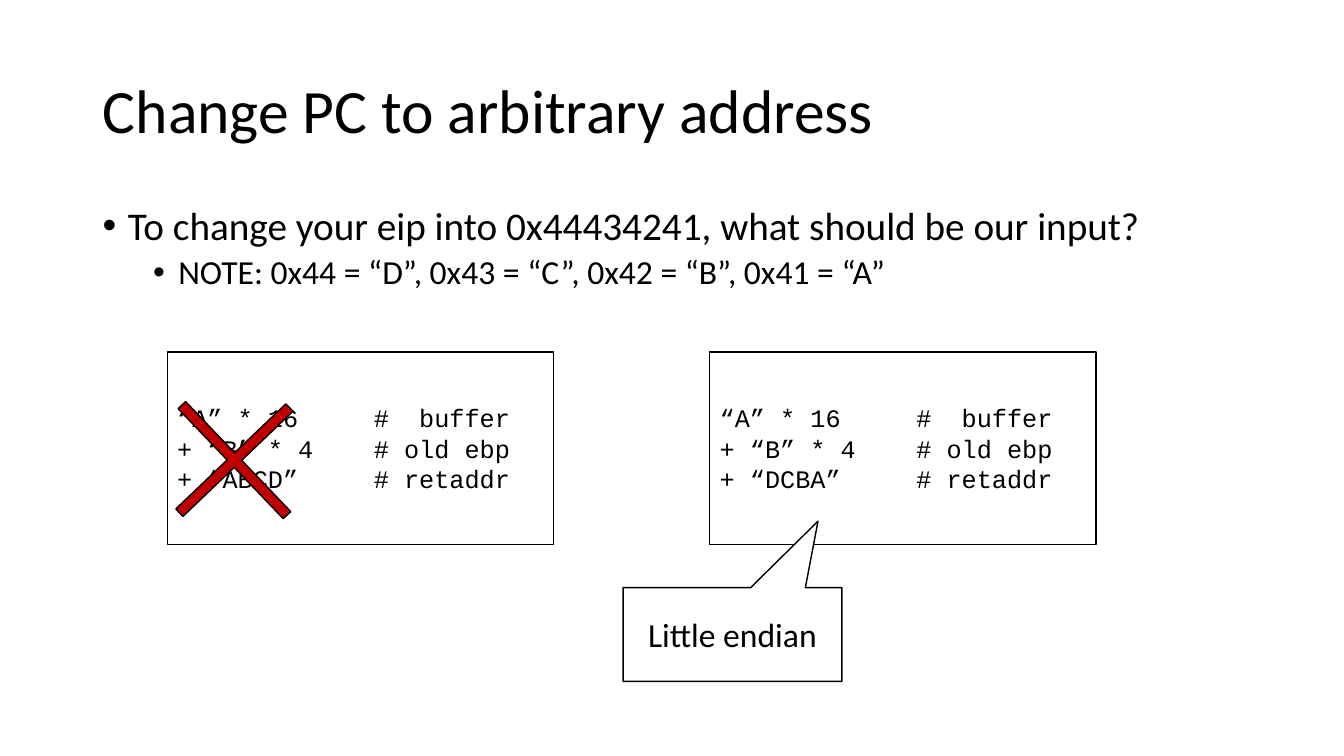
import pptx
import pptx.util
import pptx.dml.color
import pptx.enum.shapes
import pptx.enum.text
from lxml import etree

PX = 9144  # EMU per px, 100 px to the inch
SHAPE = pptx.enum.shapes.MSO_SHAPE
ALIGN = pptx.enum.text.PP_ALIGN
ANCHOR = pptx.enum.text.MSO_ANCHOR


def write(frame, lines, font, anchor, align=ALIGN.LEFT, spacing=1.0):
    """Fill a text frame with (text, size) lines."""
    frame_format = {"word_wrap": True, "vertical_anchor": anchor,
                    "auto_size": pptx.enum.text.MSO_AUTO_SIZE.NONE}
    for key, value in frame_format.items():
        setattr(frame, key, value)
    for index, (text, size) in enumerate(lines):
        paragraph = frame.add_paragraph() if index else frame.paragraphs[0]
        paragraph.text = text
        paragraph.alignment = align
        paragraph.line_spacing = spacing
        for key, value in {"name": font, "size": pptx.util.Pt(size)}.items():
            setattr(paragraph.runs[0].font, key, value)
        paragraph.runs[0].font.color.rgb = pptx.dml.color.RGBColor.from_string("000000")


def add_outlined(kind, box, fill="FFFFFF"):
    shape = slide.shapes.add_shape(kind, *(n * PX for n in box))
    shape.shadow.inherit = False
    shape.fill.solid()
    shape.fill.fore_color.rgb = pptx.dml.color.RGBColor.from_string(fill)
    shape.line.color.rgb = pptx.dml.color.RGBColor.from_string("000000")
    shape.line.width = pptx.util.Pt(1)
    return shape


deck = pptx.Presentation()
deck.slide_width, deck.slide_height = 1333 * PX, 750 * PX
slide = deck.slides.add_slide(deck.slide_layouts[5])

title = slide.shapes.title
for side, length in {"left": 92, "top": 40, "width": 1150, "height": 145}.items():
    setattr(title, side, length * PX)
write(title.text_frame, [("Change PC to arbitrary address", 44)], "Calibri",
      ANCHOR.MIDDLE, spacing=0.9)

question = slide.shapes.add_textbox(*(n * PX for n in (92, 200, 1150, 476))).text_frame
write(question, [
    ("To change your eip into 0x44434241, what should be our input?", 28),
    ("NOTE: 0x44 = “D”, 0x43 = “C”, 0x42 = “B”, 0x41 = “A”", 24),
], "Calibri", ANCHOR.TOP, spacing=0.9)
for level, (paragraph, space) in enumerate(zip(question.paragraphs, (10, 5))):
    paragraph.level = level
    paragraph.space_before = pptx.util.Pt(space)
    properties = paragraph._p.get_or_add_pPr()
    properties.set("marL", str((25 + 50 * level) * PX))
    properties.set("indent", str(-25 * PX))
    for tag, key, value in (("buFont", "typeface", "Arial"), ("buChar", "char", "•")):
        etree.SubElement(properties, pptx.oxml.ns.qn("a:" + tag)).set(key, value)

for left, address in ((166, "ABCD"), (704, "DCBA")):
    payload = add_outlined(SHAPE.RECTANGLE, (left, 349, 383, 191))
    write(payload.text_frame, [
        ("“A” * 16     #  buffer", 18),
        ("+ “B” * 4    # old ebp", 18),
        (f"+ “{address}”     # retaddr", 18),
    ], "Courier New", ANCHOR.MIDDLE)

wrong_mark = add_outlined(SHAPE.CROSS, (157, 381, 151, 151), "C00000")
wrong_mark.rotation = 46.3
wrong_mark.adjustments[0] = 0.466

byte_order = add_outlined(SHAPE.RECTANGULAR_CALLOUT, (618, 583, 217, 93))
byte_order.adjustments[0] = 0.391
byte_order.adjustments[1] = -1.209
write(byte_order.text_frame, [("Little endian", 24)], "Calibri", ANCHOR.MIDDLE, ALIGN.CENTER)

deck.save("out.pptx")
